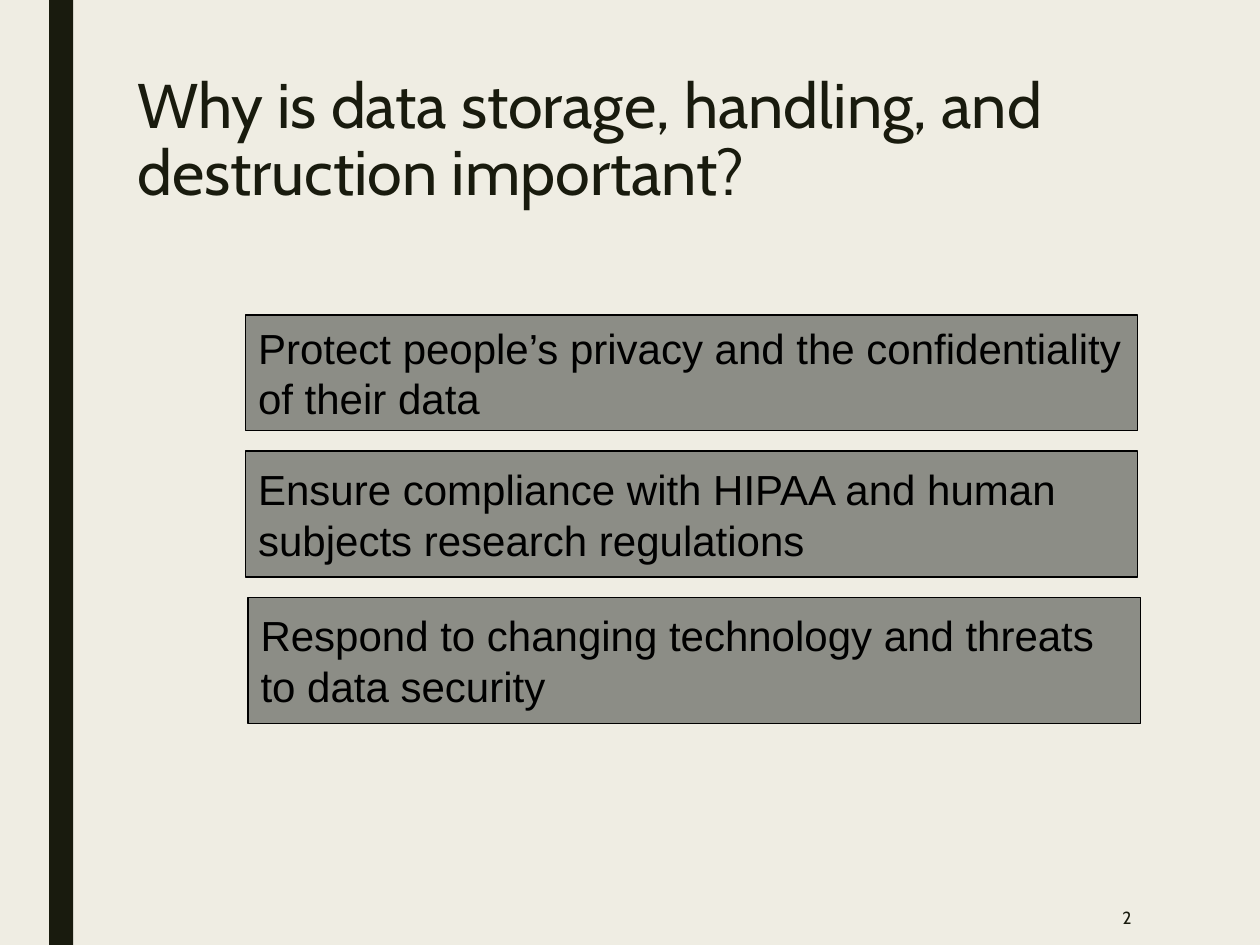
from pptx import Presentation
from pptx.dml.color import RGBColor
from pptx.enum.shapes import MSO_SHAPE as Shape
from pptx.enum.text import MSO_ANCHOR as Anchor, PP_ALIGN as Align
from pptx.util import Pt

INK, PAPER, GRAY, BLACK = "191B0E", "EFEDE3", "8C8D86", "000000"

# Each reason with its box: left, top, width, height
REASONS = [
    ("Protect people’s privacy and the confidentiality of their data",
     (140.4, 180, 509.8, 66.2)),
    ("Ensure compliance with HIPAA and human subjects research regulations",
     (140.4, 257.8, 509.8, 72)),
    ("Respond to changing technology and threats to data security",
     (141.8, 341.3, 509.8, 72)),
]


def color(value):
    return RGBColor.from_string(value)


def add_rectangle(page, box, fill, outline=None):
    shape = page.shapes.add_shape(Shape.RECTANGLE, *map(Pt, box))
    shape.shadow.inherit = False
    shape.fill.solid()
    shape.fill.fore_color.rgb = color(fill)
    if outline:
        shape.line.color.rgb = color(outline)
        shape.line.width = Pt(0.75)
    else:
        shape.line.fill.background()
    return shape


def write(shape, text, size, font, ink, anchor=Anchor.MIDDLE, align=Align.LEFT):
    frame = shape.text_frame
    frame.word_wrap = True
    frame.vertical_anchor = anchor
    para = frame.paragraphs[0]
    para.text = text
    para.alignment = align
    para.font.size = Pt(size)
    para.font.name = font
    para.font.color.rgb = color(ink)
    return para


def add_title(page, box):
    shape = page.shapes.add_textbox(*map(Pt, box))
    para = write(shape, "Why is data storage, handling, and destruction important?",
                 36, "Cabin", INK, anchor=Anchor.TOP)
    para.line_spacing = 0.89


def add_page_number(page, box):
    shape = page.shapes.add_textbox(*map(Pt, box))
    write(shape, "2", 10, "Cabin", INK, align=Align.RIGHT)


def add_reason(page, box, text):
    write(add_rectangle(page, box, GRAY, BLACK), text, 24, "Arial", BLACK)


def main():
    deck = Presentation()
    deck.slide_width, deck.slide_height = Pt(720), Pt(540)
    page = deck.slides.add_slide(deck.slide_layouts[6])
    page.background.fill.solid()
    page.background.fill.fore_color.rgb = color(PAPER)

    # Side bar, title and page number
    add_rectangle(page, (28.1, 0, 13.7, 540), INK)
    add_title(page, (71.3, 38.9, 648, 90))
    add_page_number(page, (559.4, 508.3, 94.3, 31.7))

    # Reasons
    for text, box in REASONS:
        add_reason(page, box, text)

    deck.save("out.pptx")


if __name__ == "__main__":
    main()
